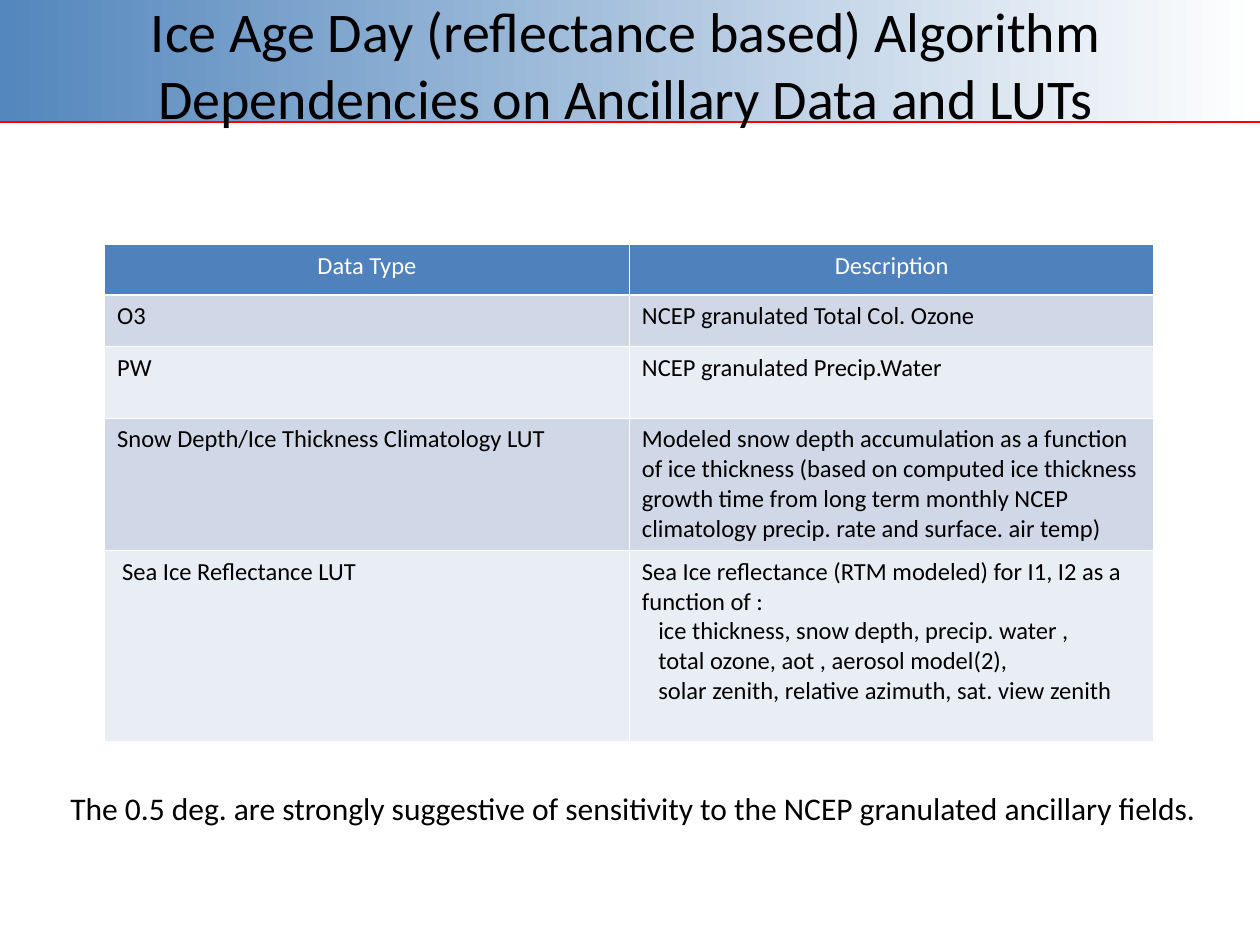
from lxml.etree import SubElement
from pptx import Presentation
from pptx.dml.color import RGBColor
from pptx.enum.shapes import MSO_CONNECTOR, MSO_SHAPE
from pptx.enum.text import MSO_ANCHOR, MSO_AUTO_SIZE, PP_ALIGN
from pptx.oxml import parse_xml
from pptx.oxml.ns import nsdecls, qn
from pptx.util import Inches, Pt

FONT = "Calibri"
COLORS = {
    "band": "5487BD",
    "rule": "FF0000",
    "header": "4F81BD",
    "odd_row": "D0D8E8",
    "even_row": "E9EDF4",
    "white": "FFFFFF",
    "text": "000000",
}

# Each cell is a list of (text, left indent in inches) paragraphs.
ROWS = [
    ([("Data Type", 0)], [("Description", 0)]),
    ([("O3", 0)], [("NCEP granulated Total Col. Ozone", 0)]),
    ([("PW", 0)], [("NCEP granulated Precip.Water", 0)]),
    (
        [("Snow Depth/Ice Thickness Climatology LUT", 0)],
        [("Modeled snow depth accumulation as a function of ice thickness "
          "(based on computed ice thickness growth time from long term monthly "
          "NCEP climatology precip. rate and surface. air temp)", 0)],
    ),
    (
        [("Sea Ice Reflectance LUT", 0.04)],
        [
            ("Sea Ice reflectance (RTM modeled) for I1, I2 as a function of :", 0),
            ("ice thickness, snow depth, precip. water ,", 0.13),
            ("total ozone, aot , aerosol model(2),", 0.13),
            ("solar zenith, relative azimuth, sat. view zenith", 0.13),
        ],
    ),
]
ROW_HEIGHTS = [0.4, 0.41, 0.57, 1.05, 1.52]


def color(name):
    return RGBColor.from_string(COLORS[name])


def add_text(paragraph, text, size, color_name="text", align=PP_ALIGN.LEFT):
    paragraph.alignment = align
    run = paragraph.add_run()
    run.text = text
    run.font.name = FONT
    run.font.size = Pt(size)
    run.font.color.rgb = color(color_name)


def add_header_band(slide, left, top, width, height):
    band = slide.shapes.add_shape(MSO_SHAPE.RECTANGLE, left, top, width, height)
    band.shadow.inherit = False
    band.line.fill.background()
    band.fill.gradient()
    band.fill.gradient_angle = 0
    for stop, name in zip(band.fill.gradient_stops, ("band", "white")):
        stop.color.rgb = color(name)

    bottom = top + height
    rule = slide.shapes.add_connector(
        MSO_CONNECTOR.STRAIGHT, left, bottom, left + width, bottom)
    rule.line.color.rgb = color("rule")
    rule.line.width = Pt(1.25)
    SubElement(rule._element.spPr, qn("a:effectLst"))


def place_title(slide, left, top, width, height):
    title = slide.shapes.title
    title.left, title.top, title.width, title.height = left, top, width, height
    frame = title.text_frame
    frame.vertical_anchor = MSO_ANCHOR.TOP
    frame.auto_size = MSO_AUTO_SIZE.NONE
    frame.word_wrap = True
    add_text(frame.paragraphs[0],
             "Ice Age Day (reflectance based) Algorithm "
             "Dependencies on Ancillary Data and LUTs",
             32, align=PP_ALIGN.CENTER)
    # The title overlaps the band, so it goes in front.
    slide.shapes._spTree.append(title._element)


def set_borders(cell):
    """Draw thin white lines on all four sides of a cell."""
    properties = cell._tc.get_or_add_tcPr()
    for position, side in enumerate(("lnL", "lnR", "lnT", "lnB")):
        properties.insert(position, parse_xml(
            f'<a:{side} {nsdecls("a")} w="{Pt(1)}"><a:solidFill>'
            f'<a:srgbClr val="{COLORS["white"]}"/></a:solidFill></a:{side}>'))


def fill_cell(cell, lines, fill_name, color_name, align):
    cell.fill.solid()
    cell.fill.fore_color.rgb = color(fill_name)
    set_borders(cell)
    frame = cell.text_frame
    for index, (text, indent) in enumerate(lines):
        paragraph = frame.add_paragraph() if index else frame.paragraphs[0]
        if indent:
            paragraph._p.get_or_add_pPr().set("marL", str(Inches(indent)))
        add_text(paragraph, text, 14, color_name, align)


def add_dependency_table(slide, left, top, width):
    height = Inches(sum(ROW_HEIGHTS))
    table = slide.shapes.add_table(
        len(ROWS), len(ROWS[0]), left, top, width, height).table
    for row_index, (row, row_height) in enumerate(zip(ROWS, ROW_HEIGHTS)):
        table.rows[row_index].height = Inches(row_height)
        if row_index == 0:
            style = ("header", "white", PP_ALIGN.CENTER)
        else:
            stripe = "odd_row" if row_index % 2 else "even_row"
            style = (stripe, "text", PP_ALIGN.LEFT)
        for column_index, lines in enumerate(row):
            fill_cell(table.cell(row_index, column_index), lines, *style)


def add_conclusion(slide, left, top, width, height):
    frame = slide.shapes.add_textbox(left, top, width, height).text_frame
    frame.word_wrap = True
    add_text(frame.paragraphs[0],
             "The 0.5 deg. are strongly suggestive of sensitivity to the "
             "NCEP granulated ancillary fields.", 18)


def main():
    presentation = Presentation()
    presentation.slide_width = Inches(10)
    presentation.slide_height = Inches(7.5)
    slide = presentation.slides.add_slide(presentation.slide_layouts[5])
    slide.background.fill.solid()
    slide.background.fill.fore_color.rgb = color("white")

    add_header_band(slide, Inches(0), Inches(0), Inches(10), Inches(0.97))
    place_title(slide, Inches(0.72), Inches(-0.08), Inches(8.5), Inches(1.61))
    add_dependency_table(slide, Inches(0.83), Inches(1.94), Inches(8.33))
    add_conclusion(slide, Inches(0.46), Inches(6.21), Inches(9.33), Inches(0.4))
    presentation.save("out.pptx")


if __name__ == "__main__":
    main()
